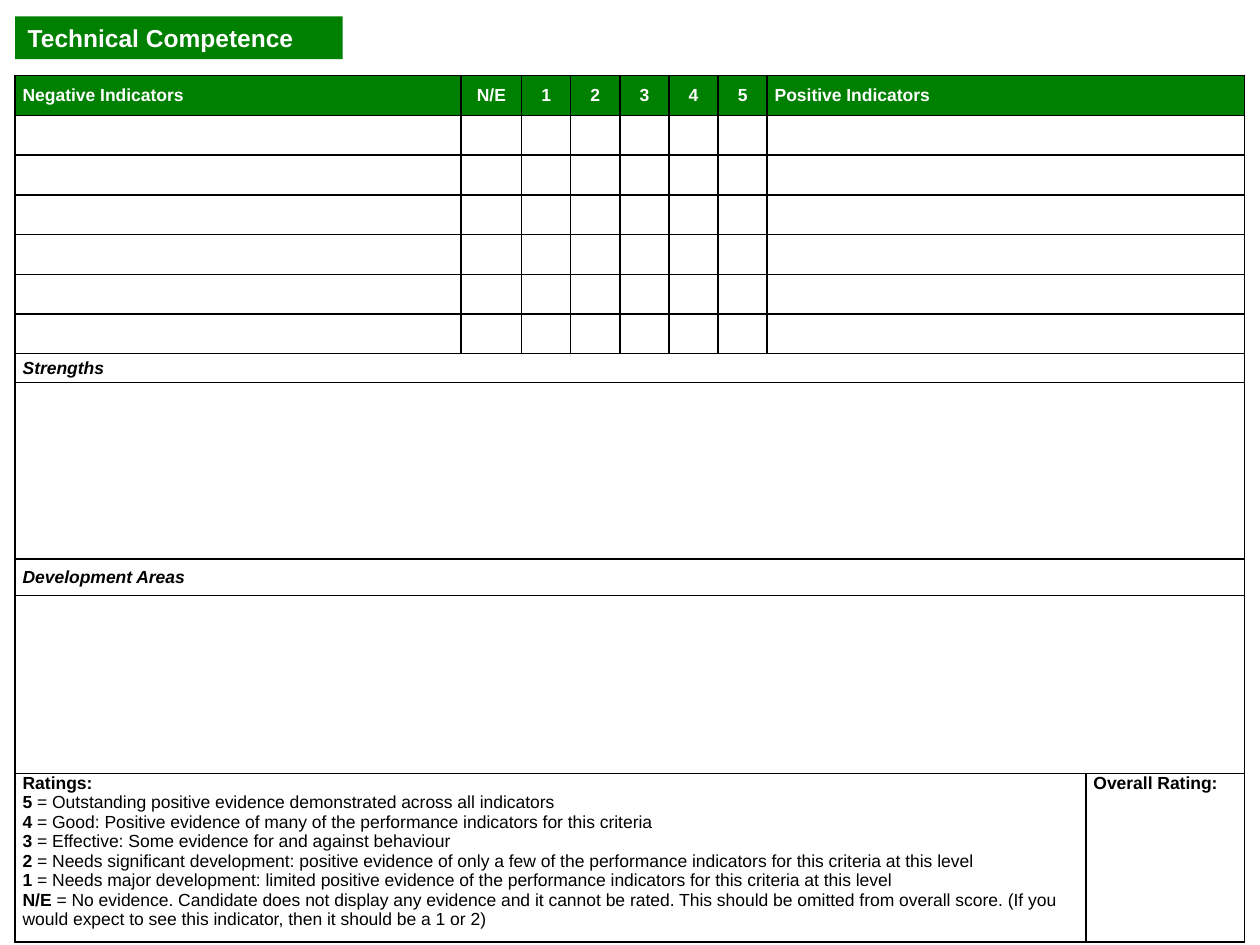
"""Build a one-slide interview scoring form for technical competence."""
from dataclasses import dataclass

from lxml import etree
from pptx import Presentation
from pptx.dml.color import RGBColor
from pptx.enum.text import MSO_ANCHOR, MSO_AUTO_SIZE, PP_ALIGN
from pptx.oxml.ns import qn
from pptx.table import Table, _Cell
from pptx.util import Inches, Pt

LEFT, CENTER = PP_ALIGN.LEFT, PP_ALIGN.CENTER
TOP, MIDDLE = MSO_ANCHOR.TOP, MSO_ANCHOR.MIDDLE
COLORS = {"green": "008000", "white": "FFFFFF", "black": "000000"}
FONT = "Arial"
TITLE_ONLY_LAYOUT = 5
INDICATOR_ROWS = 6
STRENGTHS_ROW = INDICATOR_ROWS + 1
DEVELOPMENT_ROW = STRENGTHS_ROW + 2
RATINGS_ROW = DEVELOPMENT_ROW + 2
COLUMN_WIDTHS = [3.54, 0.48] + [0.39] * 5 + [2.53, 1.26]
ROW_HEIGHTS = [2.21 / 7] * (INDICATOR_ROWS + 1) + [0.23, 1.4, 0.29, 1.41, 1.34]
LAST_COLUMN = len(COLUMN_WIDTHS) - 1


@dataclass
class Label:
    row: int
    column: int
    text: str
    color: str = "black"
    italic: bool = False
    alignment: PP_ALIGN = LEFT
    anchor: MSO_ANCHOR = MIDDLE


@dataclass
class Rating:
    score: str
    meaning: str


HEADINGS = ["Negative Indicators", "N/E", "1", "2", "3", "4", "5", "Positive Indicators"]
LABELS = [
    Label(0, column, text, "white", alignment=LEFT if column in (0, 7) else CENTER)
    for column, text in enumerate(HEADINGS)
] + [
    Label(STRENGTHS_ROW, 0, "Strengths", italic=True),
    Label(DEVELOPMENT_ROW, 0, "Development Areas", italic=True),
    Label(RATINGS_ROW, 0, "Ratings:", anchor=TOP),
    Label(RATINGS_ROW, LAST_COLUMN, "Overall Rating:", anchor=TOP),
]
RATINGS = [
    Rating("5", "Outstanding positive evidence demonstrated across all indicators"),
    Rating("4", "Good: Positive evidence of many of the performance indicators for this criteria"),
    Rating("3", "Effective: Some evidence for and against behaviour"),
    Rating("2", "Needs significant development: positive evidence of only a few of the "
                "performance indicators for this criteria at this level"),
    Rating("1", "Needs major development: limited positive evidence of the performance "
                "indicators for this criteria at this level"),
    Rating("N/E", "No evidence. Candidate does not display any evidence and it cannot be rated. "
                  "This should be omitted from overall score. (If you would expect to see this "
                  "indicator, then it should be a 1 or 2)"),
]


def rgb(name: str) -> RGBColor:
    return RGBColor.from_string(COLORS[name])


def style_font(font, size: float, color: str, bold: bool | None = None) -> None:
    font.name, font.size, font.bold = FONT, Pt(size), bold
    font.color.rgb = rgb(color)


def add_title(slide, text: str) -> None:
    title = slide.shapes.title
    title.left, title.top = Inches(0.12), Inches(0.13)
    title.width, title.height = Inches(2.6), Inches(0.34)
    title.fill.solid()
    title.fill.fore_color.rgb = rgb("green")
    frame = title.text_frame
    frame.text = text
    frame.auto_size, frame.vertical_anchor = MSO_AUTO_SIZE.NONE, MIDDLE
    paragraph = frame.paragraphs[0]
    paragraph.alignment = LEFT
    style_font(paragraph.font, 14, "white", True)


def add_borders(cell: _Cell) -> None:
    properties = cell._tc.get_or_add_tcPr()
    for index, side in enumerate(("lnL", "lnR", "lnT", "lnB")):
        line = etree.Element(qn(f"a:{side}"), w=str(Pt(1)))
        fill = etree.SubElement(line, qn("a:solidFill"))
        etree.SubElement(fill, qn("a:srgbClr"), val=COLORS["black"])
        properties.insert(index, line)


def format_cell(cell: _Cell, color: str) -> None:
    cell.margin_left = cell.margin_right = Inches(0.06)
    cell.margin_top = cell.margin_bottom = 0
    cell.fill.solid()
    cell.fill.fore_color.rgb = rgb(color)
    style_font(cell.text_frame.paragraphs[0].font, 10, "black")
    add_borders(cell)


def merge_cells(table: Table) -> None:
    for row in range(RATINGS_ROW + 1):
        if row < STRENGTHS_ROW:
            first, last = LAST_COLUMN - 1, LAST_COLUMN
        else:
            first, last = 0, LAST_COLUMN - (row == RATINGS_ROW)
        table.cell(row, first).merge(table.cell(row, last))


def write_label(table: Table, label: Label) -> None:
    cell = table.cell(label.row, label.column)
    cell.vertical_anchor = label.anchor
    paragraph = cell.text_frame.paragraphs[0]
    paragraph.text = label.text
    paragraph.alignment = label.alignment
    style_font(paragraph.font, 10, label.color, True)
    paragraph.font.italic = label.italic


def write_rating(cell: _Cell, rating: Rating) -> None:
    paragraph = cell.text_frame.add_paragraph()
    style_font(paragraph.font, 10, "black")
    for text, bold in ((rating.score, True), (f" = {rating.meaning}", False)):
        run = paragraph.add_run()
        run.text = text
        run.font.bold = bold


def add_form(slide) -> None:
    table = slide.shapes.add_table(
        len(ROW_HEIGHTS), len(COLUMN_WIDTHS), Inches(0.12), Inches(0.6),
        Inches(sum(COLUMN_WIDTHS)), Inches(sum(ROW_HEIGHTS)),
    ).table
    table.first_row = table.horz_banding = False
    for column, width in zip(table.columns, COLUMN_WIDTHS):
        column.width = Inches(width)
    for index, (row, height) in enumerate(zip(table.rows, ROW_HEIGHTS)):
        row.height = Inches(height)
        for cell in row.cells:
            format_cell(cell, "white" if index else "green")
    merge_cells(table)
    for label in LABELS:
        write_label(table, label)
    for rating in RATINGS:
        write_rating(table.cell(RATINGS_ROW, 0), rating)


def main() -> None:
    presentation = Presentation()
    presentation.slide_width, presentation.slide_height = Inches(10), Inches(7.5)
    slide = presentation.slides.add_slide(presentation.slide_layouts[TITLE_ONLY_LAYOUT])
    add_title(slide, "Technical Competence")
    add_form(slide)
    presentation.save("out.pptx")


if __name__ == "__main__":
    main()
